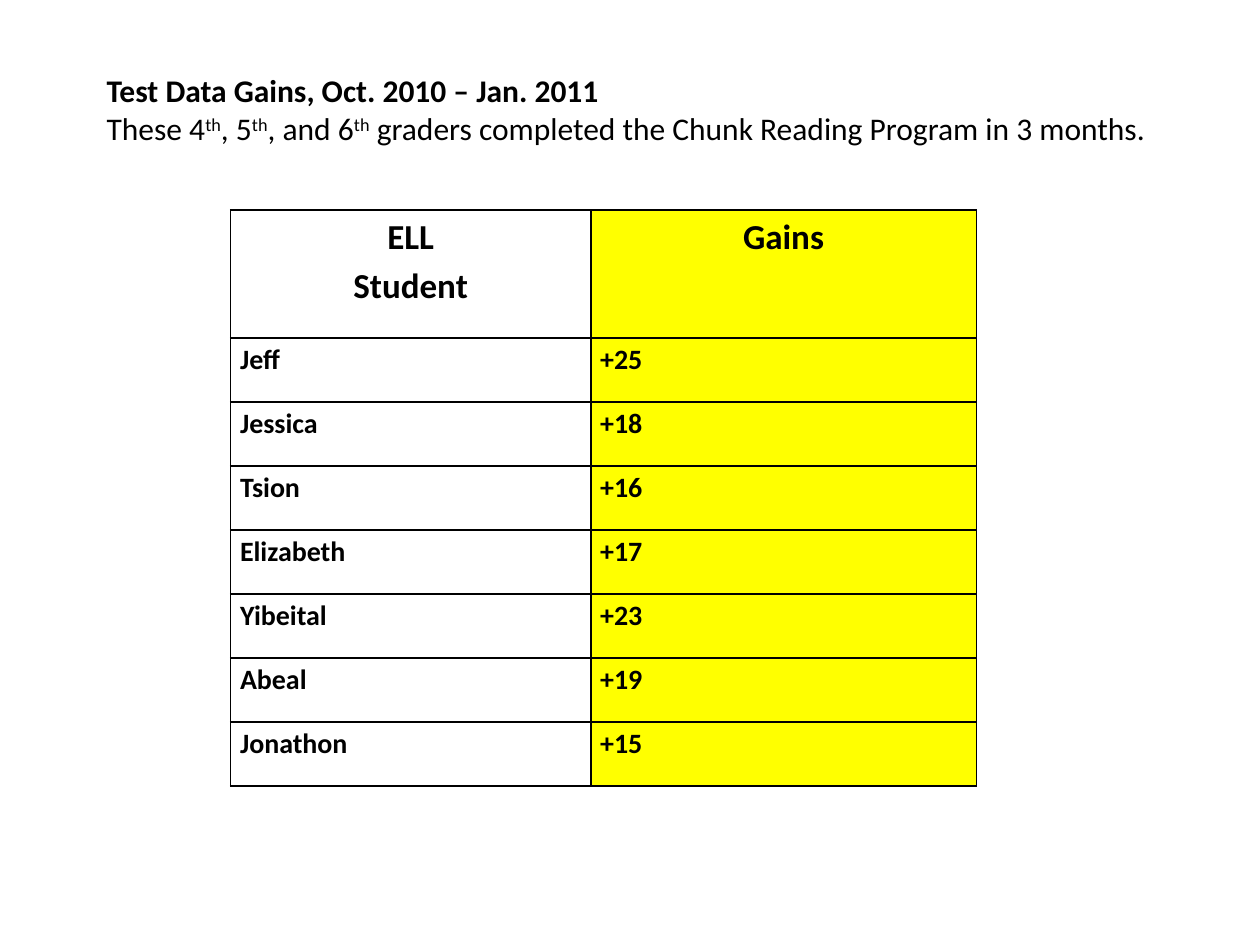
from lxml import etree
from pptx import Presentation
from pptx.dml.color import RGBColor
from pptx.enum.text import MSO_AUTO_SIZE, PP_ALIGN
from pptx.oxml.ns import qn
from pptx.util import Cm, Pt

CENTER = PP_ALIGN.CENTER
LEFT = PP_ALIGN.LEFT
GROW = MSO_AUTO_SIZE.SHAPE_TO_FIT_TEXT
COLORS = {"ink": "000000", "paper": "FFFFFF", "highlight": "FFFF00"}
CELL_MARGINS = {
    "margin_left": Cm(0.19),
    "margin_right": Cm(0.19),
    "margin_top": 0,
    "margin_bottom": 0,
}
BORDER_SIDES = ("a:lnL", "a:lnR", "a:lnT", "a:lnB")
SUPERSCRIPT = "30000"

HEADING = [
    [("Test Data Gains, Oct. 2010 – Jan. 2011", True, False)],
    [
        ("These 4", False, False),
        ("th", False, True),
        (", 5", False, False),
        ("th", False, True),
        (", and 6", False, False),
        ("th", False, True),
        (" graders completed the Chunk Reading Program in 3 months.", False, False),
    ],
]
GAINS = [
    ("ELL\nStudent", "Gains"),
    ("Jeff", "+25"),
    ("Jessica", "+18"),
    ("Tsion", "+16"),
    ("Elizabeth", "+17"),
    ("Yibeital", "+23"),
    ("Abeal", "+19"),
    ("Jonathon", "+15"),
]


class SlideBuilder:
    font_name = "Calibri"
    line_spacing = 1.15
    border_width = Pt(1)

    def __init__(self, slide):
        self.slide = slide

    def style_run(self, run, size, bold, raised=False):
        for name, value in {"name": self.font_name, "size": Pt(size), "bold": bold}.items():
            setattr(run.font, name, value)
        run.font.color.rgb = RGBColor.from_string(COLORS["ink"])
        if raised:
            run._r.get_or_add_rPr().set("baseline", SUPERSCRIPT)

    def add_text(self, left, top, width, height, lines, size):
        frame = self.slide.shapes.add_textbox(left, top, width, height).text_frame
        for name, value in {"word_wrap": True, "auto_size": GROW}.items():
            setattr(frame, name, value)
        for index, line in enumerate(lines):
            paragraph = frame.add_paragraph() if index else frame.paragraphs[0]
            for text, bold, raised in line:
                run = paragraph.add_run()
                run.text = text
                self.style_run(run, size, bold, raised)

    def add_borders(self, cell):
        properties = cell._tc.get_or_add_tcPr()
        for side in BORDER_SIDES:
            line = etree.SubElement(properties, qn(side), w=str(self.border_width))
            fill = etree.SubElement(line, qn("a:solidFill"))
            etree.SubElement(fill, qn("a:srgbClr"), val=COLORS["ink"])

    def fill_cell(self, cell, text, size, alignment, color):
        for name, value in CELL_MARGINS.items():
            setattr(cell, name, value)
        self.add_borders(cell)
        cell.fill.solid()
        cell.fill.fore_color.rgb = RGBColor.from_string(COLORS[color])
        cell.text = text
        for paragraph in cell.text_frame.paragraphs:
            paragraph.alignment = alignment
            paragraph.line_spacing = self.line_spacing
            for run in paragraph.runs:
                self.style_run(run, size, True)

    def add_table(self, left, top, widths, row_height, rows):
        heights = [2 * row_height] + [row_height] * (len(rows) - 1)
        table = self.slide.shapes.add_table(
            len(rows), len(widths), left, top, sum(widths), sum(heights)
        ).table
        for name in ("first_row", "horz_banding"):
            setattr(table, name, False)
        for column, width in zip(table.columns, widths):
            column.width = width
        for index, (row, height, values) in enumerate(zip(table.rows, heights, rows)):
            row.height = height
            size, alignment = (16, LEFT) if index else (20, CENTER)
            for cell, text, color in zip(row.cells, values, ("paper", "highlight")):
                self.fill_cell(cell, text, size, alignment, color)


def main():
    presentation = Presentation()
    presentation.slide_width = Cm(25.4)
    presentation.slide_height = Cm(19.05)
    builder = SlideBuilder(presentation.slides.add_slide(presentation.slide_layouts[6]))
    builder.add_text(Cm(1.9), Cm(1.31), Cm(23.06), Cm(2.57), HEADING, 18)
    builder.add_table(Cm(4.65), Cm(4.23), (Cm(7.26), Cm(7.77)), Cm(1.29), GAINS)
    presentation.save("out.pptx")


if __name__ == "__main__":
    main()
